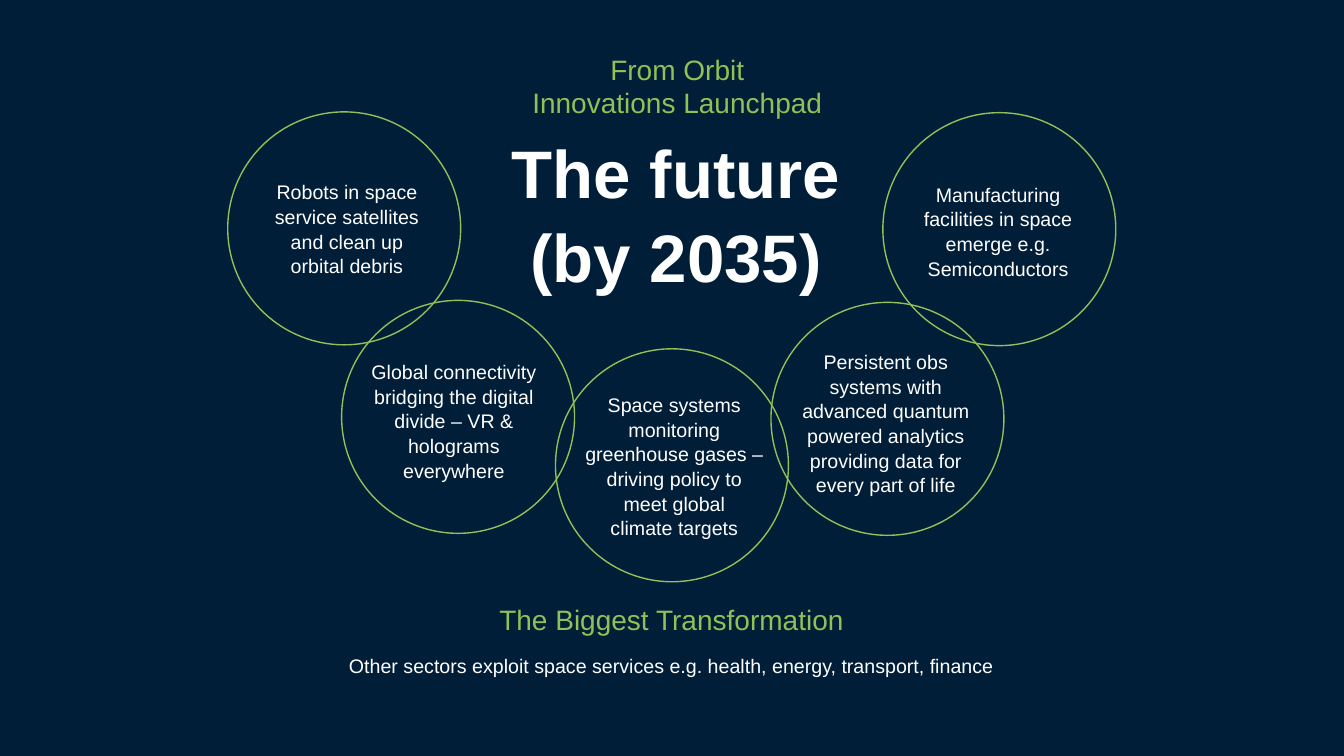
"""Build a slide of five linked circles on the future of space."""
import dataclasses

import pptx
import pptx.dml.color
import pptx.enum.shapes
import pptx.enum.text
import pptx.util

Cm = pptx.util.Cm
Pt = pptx.util.Pt
RGBColor = pptx.dml.color.RGBColor
Anchor = pptx.enum.text.MSO_ANCHOR

NAVY = RGBColor(0x00, 0x1E, 0x38)
GREEN = RGBColor(0x8E, 0xC1, 0x56)
WHITE = RGBColor(0xFF, 0xFF, 0xFF)
FONT = "Arial"
RING = 5.87


@dataclasses.dataclass(frozen=True)
class Box:
    left: float
    top: float
    width: float
    height: float


@dataclasses.dataclass(frozen=True)
class Bubble:
    text: str
    left: float
    top: float
    label: Box


@dataclasses.dataclass(frozen=True)
class Line:
    text: str
    size: float
    color: RGBColor


BUBBLES = (
    Bubble("Robots in space service satellites and clean up\norbital debris",
           5.74, 2.82, Box(6.22, 3.94, 5.05, 3.63)),
    Bubble("Global connectivity bridging the digital divide – VR & holograms everywhere",
           8.61, 7.57, Box(8.76, 8.74, 5.36, 3.71)),
    Bubble("Space systems monitoring greenhouse gases – driving policy to meet global\n"
           "climate targets",
           14.0, 8.79, Box(14.43, 9.17, 5.13, 5.13)),
    Bubble("Persistent obs systems with advanced quantum powered analytics "
           "providing data for every part of life",
           19.43, 7.62, Box(19.66, 8.99, 5.33, 3.33)),
    Bubble("Manufacturing facilities in space emerge e.g. Semiconductors",
           22.25, 2.84, Box(22.63, 3.25, 5.05, 5.13)),
)
FOOTER = (
    Line("The Biggest Transformation", 20, GREEN),
    Line("Other sectors exploit space services e.g. health, energy, transport, finance",
         14, WHITE),
)


def write(shape, box: Box, *lines: Line, bold: bool = False, inset: float = 0,
          anchor=Anchor.MIDDLE, after: float = 0, pitch=1.05) -> None:
    """Place a text shape and fill it with formatted, centred paragraphs."""
    shape.left, shape.top = Cm(box.left), Cm(box.top)
    shape.width, shape.height = Cm(box.width), Cm(box.height)
    frame = shape.text_frame
    frame.word_wrap = True
    frame.auto_size = pptx.enum.text.MSO_AUTO_SIZE.NONE
    frame.vertical_anchor = anchor
    frame.margin_left = frame.margin_right = Cm(inset)
    frame.margin_top = frame.margin_bottom = Cm(inset)
    for i, line in enumerate(lines):
        para = frame.add_paragraph() if i else frame.paragraphs[0]
        para.text = line.text
        para.alignment = pptx.enum.text.PP_ALIGN.CENTER
        para.line_spacing = pitch
        para.space_after = Pt(after)
        para.font.name = FONT
        para.font.size = Pt(line.size)
        para.font.bold = bold
        para.font.color.rgb = line.color


def label(slide):
    """Add an empty text box."""
    return slide.shapes.add_textbox(0, 0, 0, 0)


def ring(slide, item: Bubble) -> None:
    """Draw the outline circle of a bubble."""
    oval = slide.shapes.add_shape(
        pptx.enum.shapes.MSO_SHAPE.OVAL,
        Cm(item.left), Cm(item.top), Cm(RING), Cm(RING))
    oval.shadow.inherit = False
    oval.fill.background()
    oval.line.color.rgb = GREEN
    oval.line.width = Pt(1)


def main() -> None:
    """Build and save the deck."""
    deck = pptx.Presentation()
    deck.slide_width, deck.slide_height = Cm(33.87), Cm(19.05)
    slide = deck.slides.add_slide(deck.slide_layouts[5])
    slide.background.fill.solid()
    slide.background.fill.fore_color.rgb = NAVY

    write(slide.shapes.title, Box(11.58, 3.2, 10.92, 4.11),
          Line("The future (by 2035)", 48, WHITE), bold=True, anchor=Anchor.TOP)
    write(label(slide), Box(11.84, 1.37, 10.46, 1.65),
          Line("From Orbit\nInnovations Launchpad", 20, GREEN),
          anchor=Anchor.TOP, pitch=Pt(23))
    write(label(slide), Box(2.03, 15.09, 29.79, 2.03), *FOOTER, after=12)
    for item in BUBBLES:
        write(label(slide), item.label, Line(item.text, 14, WHITE), inset=0.25)
        ring(slide, item)
    deck.save("out.pptx")


if __name__ == "__main__":
    main()
